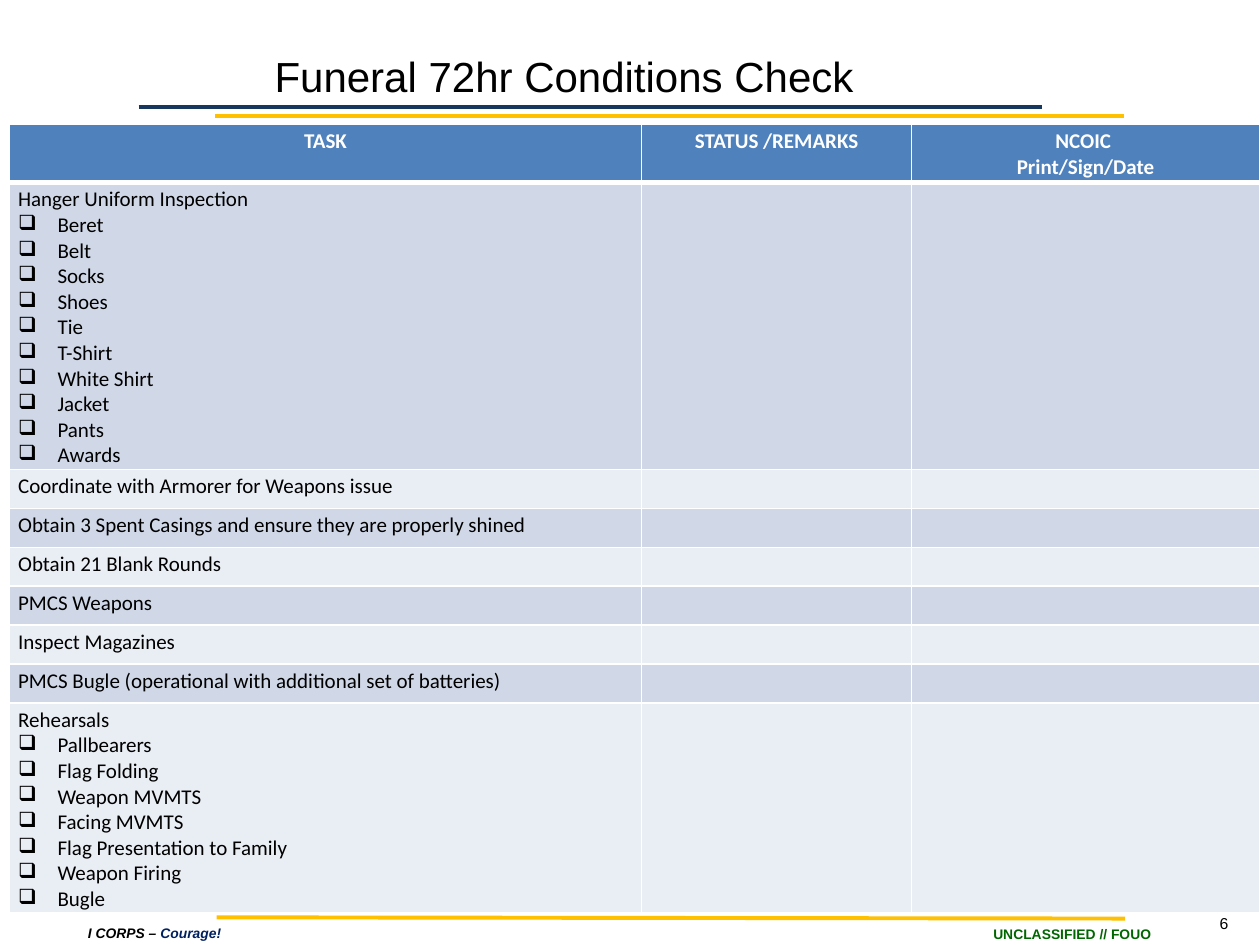
from lxml.etree import SubElement
from pptx import Presentation
from pptx.dml.color import RGBColor
from pptx.enum.shapes import MSO_CONNECTOR as Connector
from pptx.enum.text import MSO_ANCHOR as Anchor, MSO_AUTO_SIZE as AutoSize, PP_ALIGN as Align
from pptx.oxml import parse_xml
from pptx.oxml.ns import nsdecls, qn
from pptx.util import Pt


def color(value):
    return RGBColor.from_string(value)


deck = Presentation()
deck.slide_width, deck.slide_height = Pt(720), Pt(540)
slide = deck.slides.add_slide(deck.slide_layouts[6])

rules = [
    (80.6, 519.8, 596.2, 519.8, "17375E"),
    (123.8, 524.2, 643, 524.9, "FFC000"),
    (79.2, 61.2, 595.4, 61.2, "17375E"),
    (123.1, 66.2, 642.2, 66.2, "FFC000"),
]
for left, top, right, bottom, tint in rules:
    rule = slide.shapes.add_connector(
        Connector.STRAIGHT, Pt(left), Pt(top), Pt(right), Pt(bottom))
    rule.line.color.rgb = color(tint)
    rule.line.width = Pt(2.25)
    SubElement(rule._element.spPr, qn("a:effectLst"))

labels = [
    (540.7, 529.2, 144, 9.4, 7.9, True, False, [("UNCLASSIFIED // FOUO", "006600")]),
    (43.2, 524.9, 134.6, 17.3, 7.9, True, True, [("I CORPS – ", "000000"), ("Courage!", "002060")]),
    (689.8, 518.4, 30.2, 18, 9, False, False, [("6", "000000")]),
    (149.8, 25.2, 467.3, 36, 24, False, False, [("Funeral 72hr Conditions Check", "000000")]),
]
for left, top, width, height, size, bold, italic, pieces in labels:
    label = slide.shapes.add_textbox(Pt(left), Pt(top), Pt(width), Pt(height))
    frame = label.text_frame
    frame.word_wrap = True
    frame.auto_size = AutoSize.SHAPE_TO_FIT_TEXT
    if pieces[0][0].startswith("UNCLASSIFIED"):
        frame.margin_top = frame.margin_bottom = 0
        frame.vertical_anchor = Anchor.MIDDLE
        frame.paragraphs[0].alignment = Align.CENTER
    for words, tint in pieces:
        run = frame.paragraphs[0].add_run()
        run.text = words
        run.font.name = "Arial"
        run.font.size = Pt(size)
        run.font.bold = bold
        run.font.italic = italic
        run.font.color.rgb = color(tint)

headings = ["TASK", "STATUS /REMARKS", "NCOIC \nPrint/Sign/Date"]
uniform = ["Hanger Uniform Inspection", "Beret", "Belt", "Socks", "Shoes", "Tie",
           "T-Shirt", "White Shirt", "Jacket", "Pants", "Awards"]
rehearsals = ["Rehearsals", "Pallbearers", "Flag Folding", "Weapon MVMTS", "Facing MVMTS",
              "Flag Presentation to Family", "Weapon Firing", "Bugle"]
tasks = [
    "\n".join(uniform),
    "Coordinate with Armorer for Weapons issue",
    "Obtain 3 Spent Casings and ensure they are properly shined",
    "Obtain 21 Blank Rounds",
    "PMCS Weapons",
    "Inspect Magazines",
    "PMCS Bugle (operational with additional set of batteries)",
    "\n".join(rehearsals),
]
rows = [headings] + [[task, "", ""] for task in tasks]
heights = [33.4, 164] + [22.25] * 6 + [120]
widths = [361.4, 154.3, 198.7]

checklist = slide.shapes.add_table(
    len(rows), len(widths), Pt(5.3), Pt(70.9), Pt(sum(widths)), Pt(sum(heights))).table
for column, width in zip(checklist.columns, widths):
    column.width = Pt(width)
for index, (entries, height) in enumerate(zip(rows, heights)):
    checklist.rows[index].height = Pt(height)
    is_header = index == 0
    band = "4F81BD" if is_header else ("E9EDF4", "D0D8E8")[index % 2]
    for position, entry in enumerate(entries):
        cell = checklist.cell(index, position)
        cell.margin_left = cell.margin_right = Pt(5.1)
        cell.margin_top, cell.margin_bottom = Pt(2.6), 0
        properties = cell._tc.get_or_add_tcPr()
        for side in ("L", "R", "T", "B"):
            thick = (is_header and side == "B") or (index == 1 and side == "T")
            properties.append(parse_xml(
                f'<a:ln{side} {nsdecls("a")} w="{Pt(3 if thick else 1)}"><a:solidFill>'
                f'<a:srgbClr val="FFFFFF"/></a:solidFill></a:ln{side}>'))
        cell.fill.solid()
        cell.fill.fore_color.rgb = color(band)
        cell.text_frame.text = entry
        for line, paragraph in enumerate(cell.text_frame.paragraphs):
            if is_header:
                paragraph.alignment = Align.CENTER
            elif line > 0:
                indents = paragraph._p.get_or_add_pPr()
                indents.set("marL", str(Pt(22.5)))
                indents.set("indent", str(Pt(-22.5)))
                SubElement(indents, qn("a:buChar")).set("char", "❑")
            if not entry:
                SubElement(paragraph._p, qn("a:endParaRPr")).set("sz", "1200")
            for run in paragraph.runs:
                run.font.name = "Calibri"
                run.font.size = Pt(12)
                run.font.bold = is_header
                run.font.color.rgb = color("FFFFFF" if is_header else "000000")

deck.save("out.pptx")
